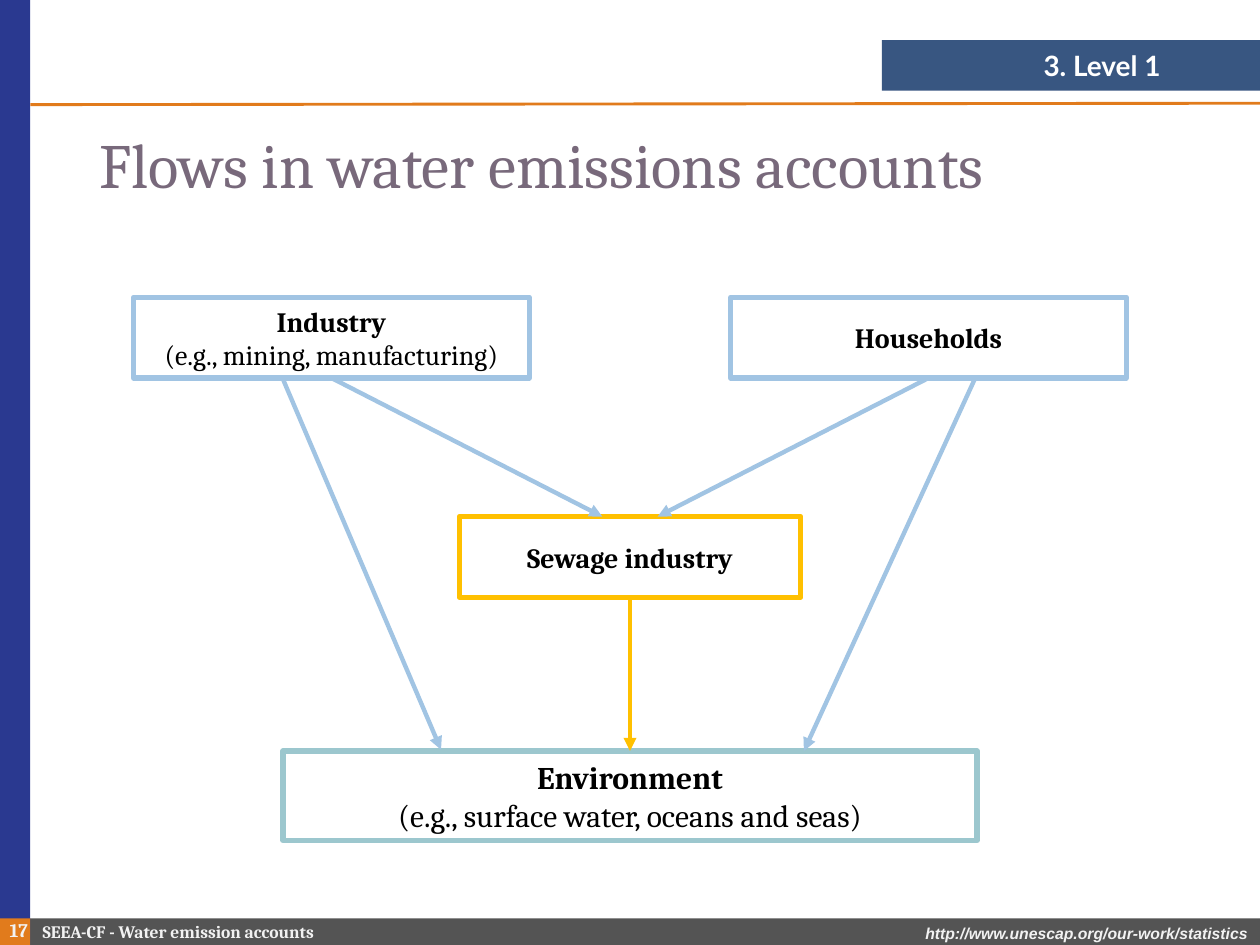
from dataclasses import dataclass

from lxml import etree
from pptx import Presentation
from pptx.dml.color import RGBColor
from pptx.enum import shapes as kinds, text as tx
from pptx.oxml import ns
from pptx.util import Pt

WHITE = RGBColor(0xFF, 0xFF, 0xFF)
BLACK = RGBColor(0, 0, 0)
PALE = RGBColor(0xF2, 0xF2, 0xF2)
NAVY = RGBColor(0x07, 0x2C, 0x62)
INDIGO = RGBColor(0x2A, 0x39, 0x90)
GREY = RGBColor(0x54, 0x54, 0x54)
ORANGE = RGBColor(0xE1, 0x7B, 0x1C)
MAUVE = RGBColor(0x78, 0x69, 0x7B)
BLUE = RGBColor(0xA1, 0xC4, 0xE3)
GOLD = RGBColor(0xFF, 0xC0, 0x00)
TEAL = RGBColor(0x9C, 0xC7, 0xCE)

LEFT, CENTER, RIGHT = tx.PP_ALIGN.LEFT, tx.PP_ALIGN.CENTER, tx.PP_ALIGN.RIGHT
Area = tuple[float, float, float, float]
Point = tuple[float, float]


@dataclass(frozen=True)
class Band:
    area: Area
    color: RGBColor
    opacity: int = 100


@dataclass(frozen=True)
class Label:
    area: Area
    wording: str
    align: tx.PP_ALIGN
    font: dict
    spacing: float = 1.0


@dataclass(frozen=True)
class Node:
    area: Area
    name: str
    examples: str
    size: float
    color: RGBColor


@dataclass(frozen=True)
class Flow:
    start: Point
    end: Point
    color: RGBColor
    width: float = 2.5
    arrow: bool = True


def points(values: tuple) -> list:
    return [Pt(value) for value in values]


def write(paragraph, wording: str, align, font: dict, spacing: float = 1.0) -> None:
    paragraph.alignment = align
    paragraph.line_spacing = spacing
    run = paragraph.add_run()
    run.text = wording
    for key, value in font.items():
        if key == "color":
            run.font.color.rgb = value
        else:
            setattr(run.font, key, value)


def prepare(frame) -> None:
    settings = {"word_wrap": True, "vertical_anchor": tx.MSO_ANCHOR.MIDDLE}
    for key, value in settings.items():
        setattr(frame, key, value)


def draw_band(slide, band: Band) -> None:
    rect = slide.shapes.add_shape(kinds.MSO_SHAPE.RECTANGLE, *points(band.area))
    rect.shadow.inherit = False
    rect.fill.solid()
    rect.fill.fore_color.rgb = band.color
    rect.line.fill.background()
    if band.opacity < 100:
        tint = rect.fill._xPr.find(".//" + ns.qn("a:srgbClr"))
        etree.SubElement(tint, ns.qn("a:alpha"), val=str(band.opacity * 1000))


def draw_label(slide, label: Label) -> None:
    frame = slide.shapes.add_textbox(*points(label.area)).text_frame
    prepare(frame)
    write(frame.paragraphs[0], label.wording, label.align, label.font, label.spacing)


def draw_node(slide, node: Node) -> None:
    rect = slide.shapes.add_shape(kinds.MSO_SHAPE.RECTANGLE, *points(node.area))
    rect.shadow.inherit = False
    rect.fill.background()
    rect.line.color.rgb = node.color
    rect.line.width = Pt(3)
    frame = rect.text_frame
    prepare(frame)
    font = {"name": "Cambria", "size": Pt(node.size), "color": BLACK}
    write(frame.paragraphs[0], node.name, CENTER, font | {"bold": True})
    if node.examples:
        write(frame.add_paragraph(), node.examples, CENTER, font | {"bold": False})


def draw_flow(slide, flow: Flow) -> None:
    line = slide.shapes.add_connector(
        kinds.MSO_CONNECTOR.STRAIGHT, *points(flow.start + flow.end))
    line.line.color.rgb = flow.color
    line.line.width = Pt(flow.width)
    if flow.arrow:
        etree.SubElement(line.line._get_or_add_ln(), ns.qn("a:tailEnd"), type="triangle")
    etree.SubElement(line._element.spPr, ns.qn("a:effectLst"))


WIDTH, HEIGHT = 720, 540
SIDE = 17.3
FOOT = 15.2
FOOT_TOP = HEIGHT - FOOT
MIDDLE = WIDTH / 2


def centered(top: float, width: float, height: float, center: float = MIDDLE) -> Area:
    return center - width / 2, top, width, height


BANDS = [
    Band((504, 23, 216, 28.8), NAVY, 80),
    Band((SIDE, FOOT_TOP, WIDTH - SIDE, FOOT), GREY),
    Band((0, 0, SIDE, HEIGHT), INDIGO),
    Band((0, FOOT_TOP, SIDE, FOOT), ORANGE),
]
FOOTER = {"name": "Cambria", "bold": True, "color": PALE}
LABELS = [
    Label((450.7, 524.2, 269.3, 18), "http://www.unescap.org/our-work/statistics", RIGHT,
          FOOTER | {"name": "Arial", "size": Pt(9), "italic": True}),
    Label((SIDE, FOOT_TOP, 215, 14.6), "SEEA-CF - Water emission accounts", LEFT,
          FOOTER | {"size": Pt(10)}),
    Label((-8.6, 521.6, 31.7, 19.4), "17", RIGHT, FOOTER | {"size": Pt(11)}),
    Label((504, 23.8, 166.3, 26.6), "3. Level 1", RIGHT,
          {"name": "Lato", "size": Pt(16), "bold": True, "color": WHITE}),
    Label((49.7, 64, 620.6, 64), "Flows in water emissions accounts", LEFT,
          {"name": "Cambria", "size": Pt(36), "color": MAUVE}, 0.9),
]

SOURCE_OFFSET = 170.6
SOURCE_TOP, SEWAGE_TOP, ENVIRONMENT_TOP = 169.9, 295.2, 429.1
NODE_HEIGHT = 46.1
SOURCE_BOTTOM = SOURCE_TOP + NODE_HEIGHT
INDUSTRY_X, HOUSEHOLDS_X = MIDDLE - SOURCE_OFFSET, MIDDLE + SOURCE_OFFSET
NODES = [
    Node(centered(ENVIRONMENT_TOP, 396.7, 51.1), "Environment",
         "(e.g., surface water, oceans and seas)", 18, TEAL),
    Node(centered(SOURCE_TOP, 226.1, NODE_HEIGHT, INDUSTRY_X), "Industry",
         "(e.g., mining, manufacturing)", 16, BLUE),
    Node(centered(SEWAGE_TOP, 195.1, NODE_HEIGHT), "Sewage industry", "", 16, GOLD),
    Node(centered(SOURCE_TOP, 226.1, NODE_HEIGHT, HOUSEHOLDS_X), "Households", "", 16, BLUE),
]
FLOWS = [
    Flow((SIDE, 59.8), (WIDTH, 59), ORANGE, 1.65, False),
    Flow((INDUSTRY_X, SOURCE_BOTTOM), (MIDDLE - 15.8, SEWAGE_TOP), BLUE),
    Flow((HOUSEHOLDS_X, SOURCE_BOTTOM), (MIDDLE + 15.8, SEWAGE_TOP), BLUE),
    Flow((162, 217.4), (252, 428.4), BLUE),
    Flow((557.3, SOURCE_BOTTOM), (459.4, ENVIRONMENT_TOP), BLUE),
    Flow((MIDDLE, SEWAGE_TOP + NODE_HEIGHT), (MIDDLE, ENVIRONMENT_TOP), GOLD),
]


def main() -> None:
    deck = Presentation()
    deck.slide_width, deck.slide_height = points((WIDTH, HEIGHT))
    slide = deck.slides.add_slide(deck.slide_layouts[6])
    for draw, parts in ((draw_band, BANDS), (draw_label, LABELS),
                        (draw_node, NODES), (draw_flow, FLOWS)):
        for part in parts:
            draw(slide, part)
    deck.save("out.pptx")


if __name__ == "__main__":
    main()
